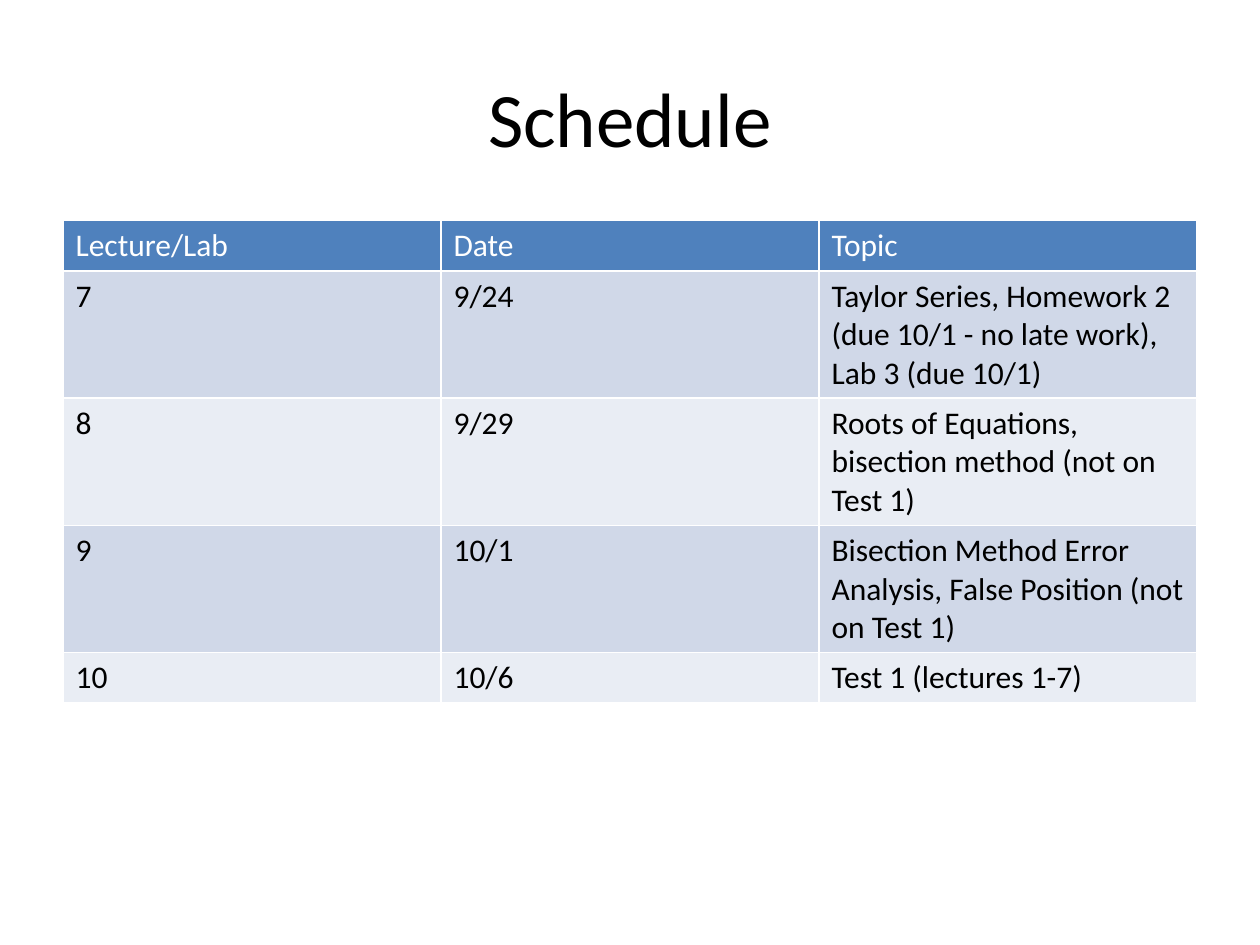
from pptx import Presentation
from pptx.dml.color import RGBColor
from pptx.enum.text import MSO_ANCHOR, PP_ALIGN
from pptx.util import Inches, Pt

BLACK = RGBColor(0x00, 0x00, 0x00)
WHITE = RGBColor(0xFF, 0xFF, 0xFF)
BLUE = RGBColor(0x4F, 0x81, 0xBD)
BANDS = [RGBColor(0xE9, 0xED, 0xF4), RGBColor(0xD0, 0xD8, 0xE8)]


def write(frame, text, size=18, color=BLACK, align=PP_ALIGN.LEFT):
    frame.word_wrap = True
    para = frame.paragraphs[0]
    para.alignment = align
    run = para.add_run()
    run.text = text
    font = run.font
    font.name = "Calibri"
    font.size = Pt(size)
    font.bold = False
    font.color.rgb = color


deck = Presentation()
deck.slide_width = Inches(10)
deck.slide_height = Inches(7.5)
slide = deck.slides.add_slide(deck.slide_layouts[6])

left = int(deck.slide_width * 0.05)
width = deck.slide_width - 2 * left
title = slide.shapes.add_textbox(
    left, int(deck.slide_height * 0.04), width, Inches(1.25)
).text_frame
title.vertical_anchor = MSO_ANCHOR.MIDDLE
write(title, "Schedule", size=44, align=PP_ALIGN.CENTER)

rows = [
    ("Lecture/Lab", "Date", "Topic"),
    ("7", "9/24", "Taylor Series, Homework 2 (due 10/1 - no late work), Lab 3 (due 10/1)"),
    ("8", "9/29", "Roots of Equations, bisection method (not on Test 1)"),
    ("9", "10/1", "Bisection Method Error Analysis, False Position (not on Test 1)"),
    ("10", "10/6", "Test 1 (lectures 1-7)"),
]
heights = [Inches(0.4), *[Inches(1.01)] * 3, Inches(0.4)]
table = slide.shapes.add_table(
    len(rows), len(rows[0]), left, Inches(1.75), width, sum(heights)
).table

for row, (height, texts) in enumerate(zip(heights, rows)):
    table.rows[row].height = height
    for col, text in enumerate(texts):
        cell = table.cell(row, col)
        cell.fill.solid()
        cell.fill.fore_color.rgb = BANDS[row % 2] if row else BLUE
        write(cell.text_frame, text, color=BLACK if row else WHITE)

deck.save("out.pptx")
